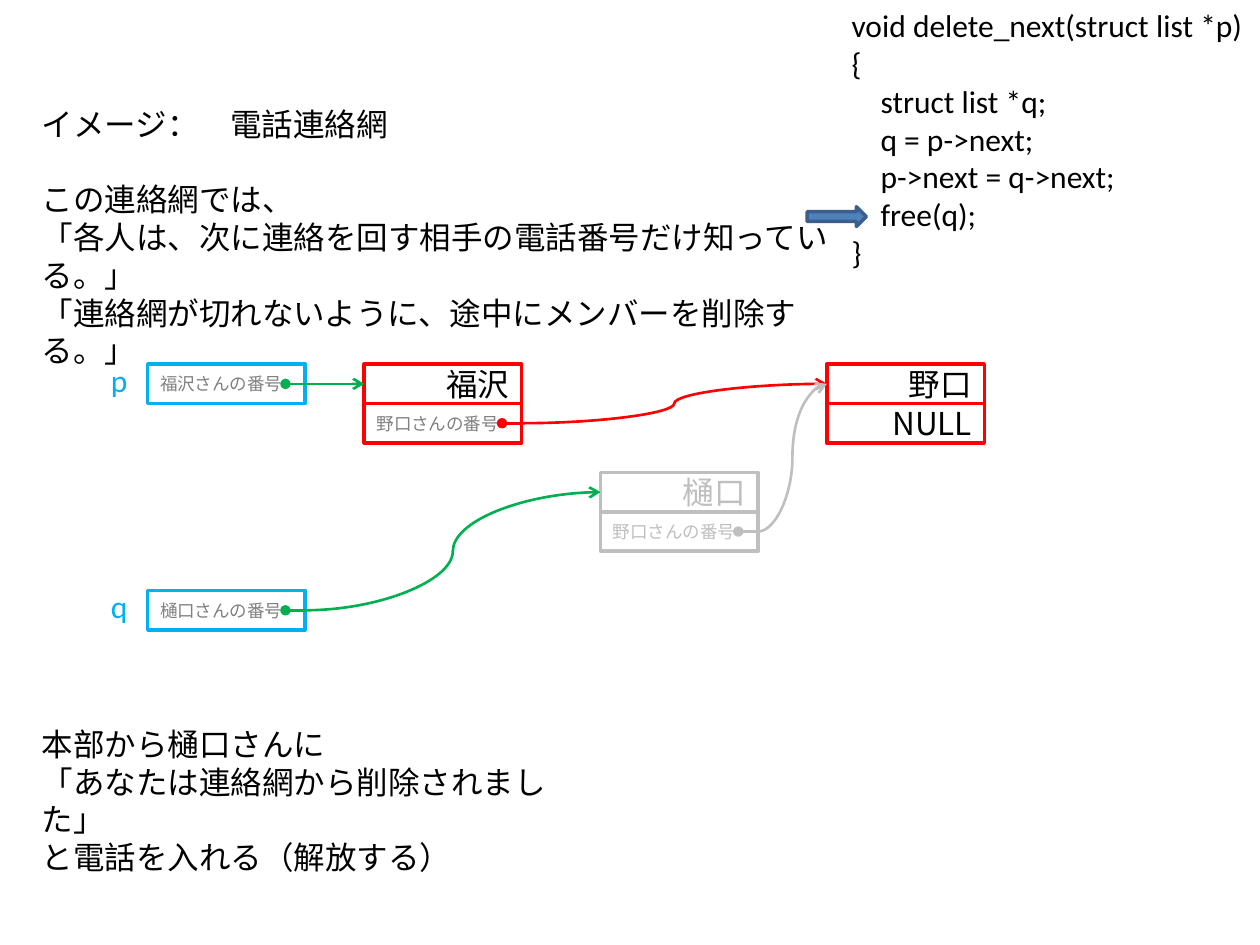
from lxml import etree
from pptx import Presentation
from pptx.dml.color import RGBColor
from pptx.enum.shapes import MSO_CONNECTOR, MSO_SHAPE
from pptx.enum.text import MSO_ANCHOR, PP_ALIGN
from pptx.oxml.ns import qn
from pptx.util import Inches, Pt

LINE, CURVE = MSO_CONNECTOR.STRAIGHT, MSO_CONNECTOR.CURVE
RECT, ARROW = MSO_SHAPE.RECTANGLE, MSO_SHAPE.RIGHT_ARROW
MIDDLE, TOP = MSO_ANCHOR.MIDDLE, MSO_ANCHOR.TOP
LEFT, RIGHT = PP_ALIGN.LEFT, PP_ALIGN.RIGHT
THEME = {
    "black": "000000", "gray": "808080", "pale": "BFBFBF", "red": "FF0000",
    "green": "00B050", "sky": "00B0F0", "blue": "4F81BD", "navy": "3A5F8C",
    "latin": "Calibri", "kanji": "Noto Sans CJK JP",
    "big": Pt(18), "small": Pt(10), "edge": Pt(2), "wire": Pt(1.5),
}

deck = Presentation()
deck.slide_width, deck.slide_height = Inches(10), Inches(7.5)
slide = deck.slides.add_slide(deck.slide_layouts[6])
shapes = slide.shapes

# Grid: 128 columns by 96 rows of square units; a cell is 16 by 4
UNIT = deck.slide_width // 128
WIDE, HIGH = 16, 4


def write(shape, lines, color="black", size="big", font="latin",
          align=LEFT, anchor=TOP):
    frame = shape.text_frame
    frame.word_wrap = True
    frame.vertical_anchor = anchor
    for i, line in enumerate(lines):
        para = frame.paragraphs[0] if i == 0 else frame.add_paragraph()
        para.alignment = align
        run = para.add_run()
        run.text = line
        run.font.name = THEME[font]
        run.font.size = THEME[size]
        run.font.color.rgb = RGBColor.from_string(THEME[color])
        east = etree.SubElement(run.font._element, qn("a:ea"))
        east.set("typeface", THEME[font])
    return frame


def wire(kind, start, end, color, tip, mark):
    link = shapes.add_connector(kind, *[int(n * UNIT) for n in start + end])
    link.line.width = THEME["wire"]
    link.line.color.rgb = RGBColor.from_string(THEME[color])
    etree.SubElement(link.line._get_or_add_ln(), qn("a:" + tip)).set("type", mark)
    etree.SubElement(link._element.spPr, qn("a:effectLst"))
    return link


# Cells: column, row, edge, text, text color, size, font, alignment
number = ("small", "latin", LEFT)
name = ("big", "kanji", RIGHT)
cells = [
    (15, 37, "sky", "福沢さんの番号", "gray", number),
    (15, 60, "sky", "樋口さんの番号", "gray", number),
    (37, 41, "red", "野口さんの番号", "gray", number),
    (61, 52, "pale", "野口さんの番号", "pale", number),
    (84, 41, "red", "NULL", "black", name),
    (37, 37, "red", "福沢", "black", name),
    (84, 37, "red", "野口", "black", name),
    (61, 48, "pale", "樋口", "pale", name),
]
boxes = {}
for col, row, edge, text, color, style in cells:
    box = shapes.add_shape(RECT, col * UNIT, row * UNIT, WIDE * UNIT, HIGH * UNIT)
    box.shadow.inherit = False
    box.fill.background()
    box.line.width = THEME["edge"]
    box.line.color.rgb = RGBColor.from_string(THEME[edge])
    write(box, [text], color, *style, MIDDLE)
    boxes[col, row] = box

# Pointers: a dotted stub inside the cell, then a curve to the next cell
links = [
    ((15, 37), (37, 37), "green"),
    ((37, 41), (84, 37), "red"),
    ((61, 52), (84, 37), "pale"),
    ((15, 60), (61, 48), "green"),
]
for (col, row), (goal, level), color in links:
    side = (col + WIDE, row + HIGH / 2)
    stub = wire(LINE, (side[0] - 2, side[1]), side, color, "headEnd", "oval")
    stub.end_connect(boxes[col, row], 3)
    wire(CURVE, side, (goal, level + HIGH / 2), color, "tailEnd", "arrow")

# Text: column, row, width, height, color, lines
notes = [
    (10, 36, 6, 5, "sky", ["p"]),
    (10, 59, 6, 5, "sky", ["q"]),
    (3, 10, 88, 24.5, "black", [
        "イメージ：　電話連絡網",
        "この連絡網では、",
        "「各人は、次に連絡を回す相手の電話番号だけ知っている。」",
        "「連絡網が切れないように、途中にメンバーを削除する。」"]),
    (85.25, 0, 42.75, 32, "black", [
        "void delete_next(struct list *p)", "{", "struct list *q;",
        "q = p->next;", "p->next = q->next;", "free(q);", "}"]),
    (3, 73, 54, 13, "black", [
        "本部から樋口さんに",
        "「あなたは連絡網から削除されました」",
        "と電話を入れる（解放する）"]),
]
frames = []
for col, row, wide, high, color, lines in notes:
    note = shapes.add_textbox(*[int(n * UNIT) for n in (col, row, wide, high)])
    frames.append(write(note, lines, color))

# Gap under the heading, and the indent of the code body
frames[2].paragraphs[1].space_before = Pt(21.6)
for para in frames[3].paragraphs[2:6]:
    para._p.get_or_add_pPr().set("marL", str(Inches(0.23)))

# Arrow at the current line of code
arrow = shapes.add_shape(ARROW, 82 * UNIT, 21 * UNIT, 6 * UNIT, 2 * UNIT)
arrow.shadow.inherit = False
arrow.fill.solid()
arrow.fill.fore_color.rgb = RGBColor.from_string(THEME["blue"])
arrow.line.width = THEME["edge"]
arrow.line.color.rgb = RGBColor.from_string(THEME["navy"])

deck.save("out.pptx")
